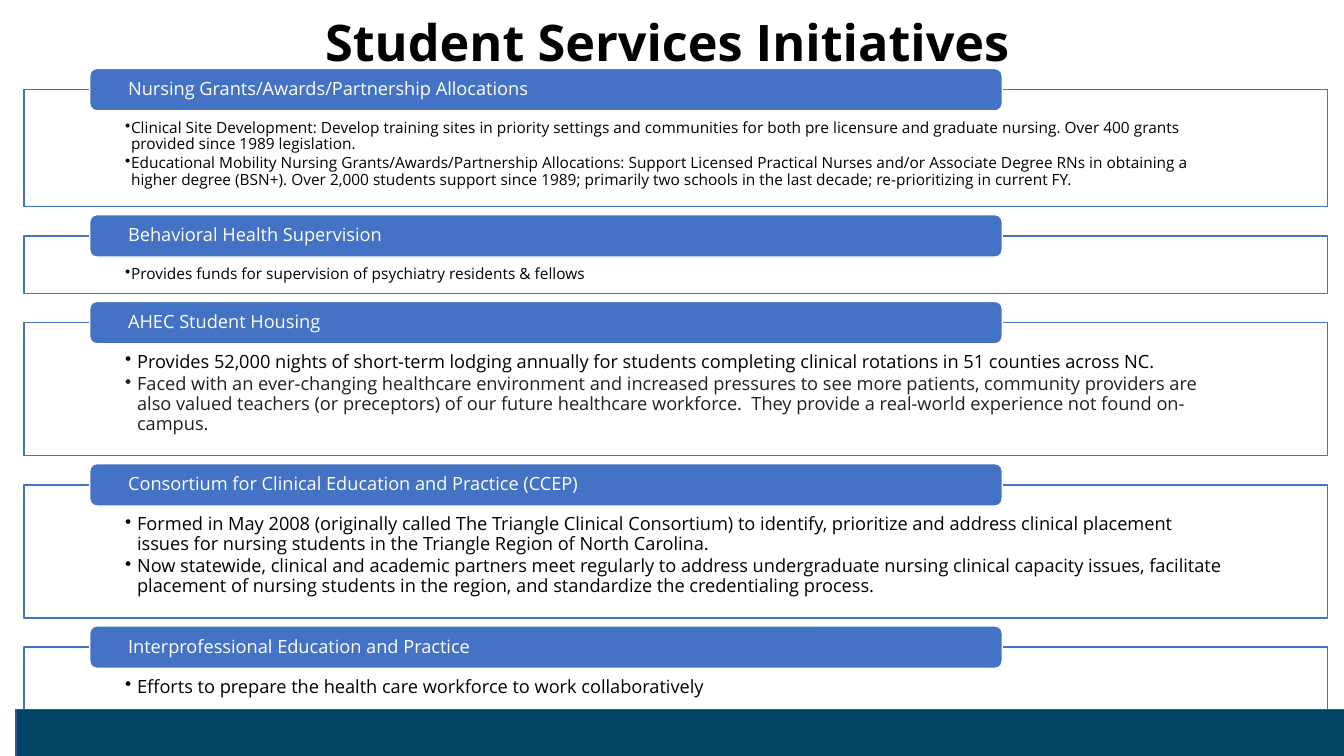
from lxml import etree
from pptx import Presentation
from pptx.dml.color import RGBColor
from pptx.enum import shapes, text
from pptx.oxml import ns
from pptx.util import Inches, Pt

FONT = "Open Sans"
BLUE, WHITE, BLACK, GRAY = "4472C4", "FFFFFF", "000000", "231F20"
GAP = 0.29

# Heading, box height, text size, hanging indent, bullets with their colours
PARTS = [
    ("Nursing Grants/Awards/Partnership Allocations", 1.16, 11, 0.06, [
        ("Clinical Site Development: Develop training sites in priority settings and "
         "communities for both pre licensure and graduate nursing. Over 400 grants "
         "provided since 1989 legislation.", BLACK),
        ("Educational Mobility Nursing Grants/Awards/Partnership Allocations: Support "
         "Licensed Practical Nurses and/or Associate Degree RNs in obtaining a higher "
         "degree (BSN+). Over 2,000 students support since 1989; primarily two schools "
         "in the last decade; re-prioritizing in current FY.", BLACK)]),
    ("Behavioral Health Supervision", 0.57, 11, 0.06, [
        ("Provides funds for supervision of psychiatry residents & fellows", BLACK)]),
    ("AHEC Student Housing", 1.32, 13, 0.12, [
        ("Provides 52,000 nights of short-term lodging annually for students completing "
         "clinical rotations in 51 counties across NC.", BLACK),
        ("Faced with an ever-changing healthcare environment and increased pressures to "
         "see more patients, community providers are also valued teachers (or preceptors) "
         "of our future healthcare workforce.  They provide a real-world experience not "
         "found on-campus.", GRAY)]),
    ("Consortium for Clinical Education and Practice (CCEP)", 1.32, 13, 0.12, [
        ("Formed in May 2008 (originally called The Triangle Clinical Consortium) to "
         "identify, prioritize and address clinical placement issues for nursing students "
         "in the Triangle Region of North Carolina.", BLACK),
        ("Now statewide, clinical and academic partners meet regularly to address "
         "undergraduate nursing clinical capacity issues, facilitate placement of nursing "
         "students in the region, and standardize the credentialing process.", BLACK)]),
    ("Interprofessional Education and Practice", 0.63, 13, 0.12, [
        ("Efforts to prepare the health care workforce to work collaboratively", BLACK)]),
]

deck = Presentation()
deck.slide_width, deck.slide_height = Inches(13.33), Inches(7.5)
slide = deck.slides.add_slide(deck.slide_layouts[6])


def panel(kind, place, fill, line, inset=(0, 0, 0, 0), anchor="MIDDLE"):
    """Add a filled, outlined shape and return it."""
    shape = slide.shapes.add_shape(kind, *map(Inches, place))
    shape.shadow.inherit = False
    shape.fill.solid()
    shape.fill.fore_color.rgb = RGBColor.from_string(fill)
    shape.line.color.rgb = RGBColor.from_string(line)
    shape.line.width = Pt(1)
    frame = shape.text_frame
    frame.word_wrap = True
    frame.vertical_anchor = text.MSO_ANCHOR[anchor]
    (frame.margin_left, frame.margin_top,
     frame.margin_right, frame.margin_bottom) = map(Inches, inset)
    return shape


def write(para, words, size, color, align="LEFT", bold=False):
    para.alignment = text.PP_ALIGN[align]
    para.line_spacing = 0.9
    run = para.add_run()
    run.text = words
    run.font.name, run.font.size, run.font.bold = FONT, Pt(size), bold
    run.font.color.rgb = RGBColor.from_string(color)


title = slide.shapes.add_textbox(*map(Inches, (1.03, -0.09, 11.18, 1.08))).text_frame
title.word_wrap = True
title.vertical_anchor = text.MSO_ANCHOR.MIDDLE
write(title.paragraphs[0], "Student Services Initiatives", 36, BLACK, "CENTER", True)

top = 0.89
for head, high, size, hang, items in PARTS:
    box = panel(shapes.MSO_SHAPE.RECTANGLE, (0.24, top, 12.93, high),
                WHITE, BLUE, (1, 0.3, 1, 0.1), "TOP")
    tint = box.fill._xPr.find(".//" + ns.qn("a:srgbClr"))
    etree.SubElement(tint, ns.qn("a:alpha"), val="90000")
    frame = box.text_frame
    for i, (words, color) in enumerate(items):
        para = frame.add_paragraph() if i else frame.paragraphs[0]
        write(para, words, size, color)
        para.space_after = Pt(0.15 * size)
        props = para._p.get_or_add_pPr()
        props.set("marL", str(Inches(hang)))
        props.set("indent", str(Inches(-hang)))
        etree.SubElement(props, ns.qn("a:buChar"), char="•")

    tab = panel(shapes.MSO_SHAPE.ROUNDED_RECTANGLE, (0.89, top - 0.21, 9.05, 0.42),
                BLUE, WHITE, (0.36, 0, 0.36, 0))
    write(tab.text_frame.paragraphs[0], head, 13, WHITE)
    top += high + GAP

panel(shapes.MSO_SHAPE.RECTANGLE, (0.16, 7.04, 13.18, 0.57), "004363", "325491")

deck.save("out.pptx")
